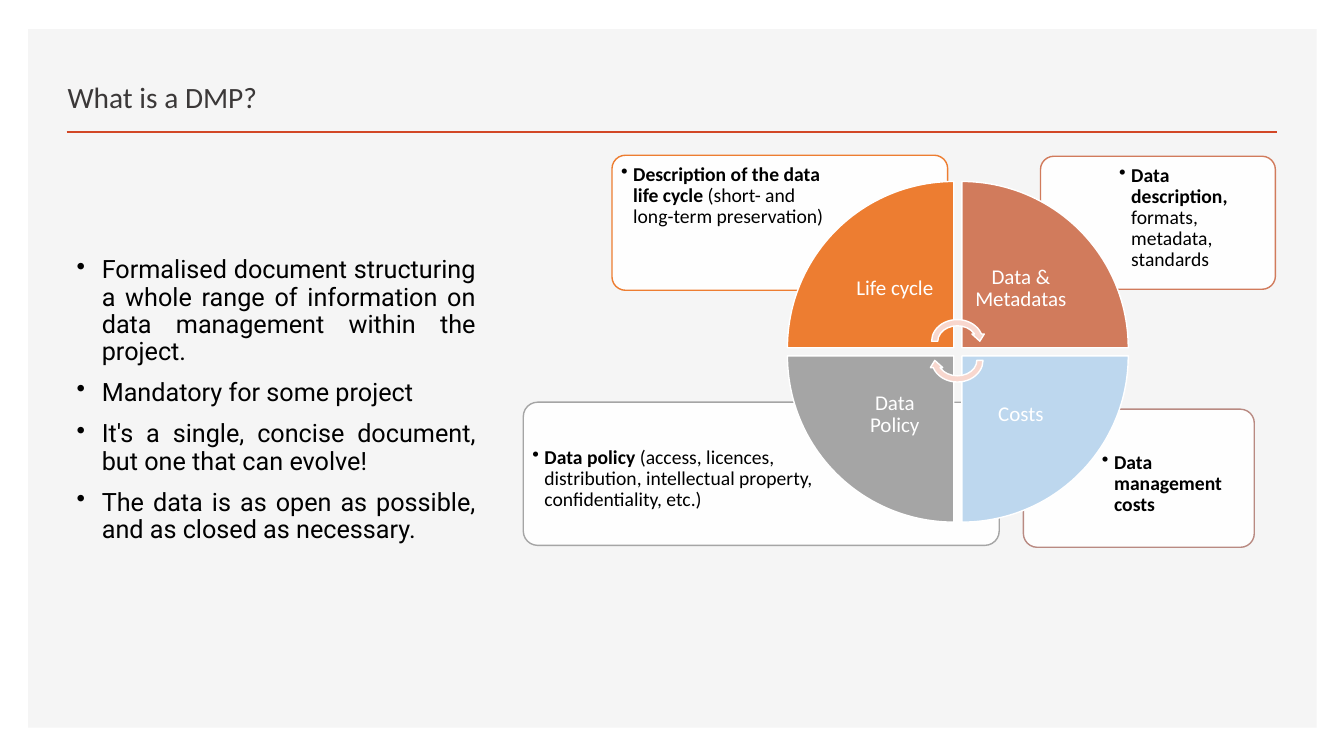
import pptx
import pptx.util
import pptx.dml.color
import pptx.enum.shapes
import pptx.enum.text
import pptx.oxml
import pptx.oxml.ns

Inches, Pt = pptx.util.Inches, pptx.util.Pt
SHAPE = pptx.enum.shapes.MSO_SHAPE
ALIGN = pptx.enum.text.PP_ALIGN
ANCHOR = pptx.enum.text.MSO_ANCHOR
rgb = pptx.dml.color.RGBColor.from_string
NS = pptx.oxml.ns.nsdecls("a")

prs = pptx.Presentation()
prs.slide_width, prs.slide_height = Inches(13.33), Inches(7.5)
slide = prs.slides.add_slide(prs.slide_layouts[5])
shapes = slide.shapes


def add_shape(kind, box, fill, line=None, rotation=0):
    sp = shapes.add_shape(kind, *map(Inches, box))
    sp.shadow.inherit = False
    sp.rotation = rotation
    sp.fill.solid()
    sp.fill.fore_color.rgb = rgb(fill)
    if line:
        sp.line.color.rgb = rgb(line)
        sp.line.width = Pt(1)
    else:
        sp.line.fill.background()
    return sp


def write(sp, paragraphs, font, size, color, align, anchor, insets, indent=0, before=0):
    """Each paragraph is a list of (text, bold) runs; an indent adds bullets."""
    tf = sp.text_frame
    frame = {"word_wrap": True, "vertical_anchor": anchor,
             "auto_size": pptx.enum.text.MSO_AUTO_SIZE.NONE}
    for side, inset in zip(("left", "top", "right", "bottom"), insets):
        frame["margin_" + side] = Inches(inset)
    for name, value in frame.items():
        setattr(tf, name, value)
    for i, runs in enumerate(paragraphs):
        p = tf.add_paragraph() if i else tf.paragraphs[0]
        p.alignment, p.line_spacing, p.space_before = align, 0.9, Pt(before)
        if indent:
            pPr = p._p.get_or_add_pPr()
            pPr.set("marL", str(Inches(indent)))
            pPr.set("indent", str(-Inches(indent)))
            pPr.append(pptx.oxml.parse_xml(f'<a:buChar {NS} char="•"/>'))
        for text, bold in runs:
            r = p.add_run()
            r.text = text
            for name, value in {"name": font, "size": Pt(size), "bold": bold}.items():
                setattr(r.font, name, value)
            r.font.color.rgb = rgb(color)


# Background panel and rule under the title
add_shape(SHAPE.RECTANGLE, (0.28, 0.29, 12.78, 6.93), "F5F5F5")
rule = shapes.add_connector(pptx.enum.shapes.MSO_CONNECTOR.STRAIGHT,
                            *map(Inches, (0.66, 1.31, 12.67, 1.31)))
rule.line.color.rgb = rgb("D24726")
rule.line.width = Pt(2)
rule._element.spPr.append(pptx.oxml.parse_xml(f"<a:effectLst {NS}/>"))

# Title, brought in front of the panel
title = shapes.title
title.left, title.top, title.width, title.height = map(Inches, (0.57, 0.49, 7.52, 0.7))
write(title, [[("What is a DMP?", False)]], "Calibri", 21, "3B3838",
      ALIGN.LEFT, ANCHOR.BOTTOM, (0.1, 0.05, 0.1, 0.05))
title._element.getparent().append(title._element)

# Callouts: frame, outline colour, text area, runs
callouts = [
    ((10.15, 4.06, 2.29, 1.37), "B98A82", (10.87, 4.43, 1.54, 0.97),
     [("Data management costs", True)]),
    ((5.19, 3.99, 4.72, 1.42), "A5A5A5", (5.22, 4.38, 3.24, 1.01),
     [("Data policy ", True),
      ("(access, licences, distribution, intellectual property, confidentiality, etc.)", False)]),
    ((10.32, 1.55, 2.33, 1.32), "D17B5C", (11.04, 1.58, 1.57, 0.93),
     [("Data description, ", True), ("formats, metadata, standards", False)]),
    ((6.07, 1.54, 3.33, 1.34), "ED7D31", (6.1, 1.57, 2.27, 0.95),
     [("Description of the data life cycle ", True),
      ("(short- and long-term preservation)", False)]),
]
for frame, outline, area, runs in callouts:
    sp = add_shape(SHAPE.ROUNDED_RECTANGLE, frame, "FFFFFF", outline)
    sp.adjustments[0] = 0.1
    color = sp._element.spPr.find(".//" + pptx.oxml.ns.qn("a:srgbClr"))
    color.append(pptx.oxml.parse_xml(f'<a:alpha {NS} val="90000"/>'))
    write(shapes.add_textbox(*map(Inches, area)), [runs], "Calibri", 14, "000000",
          ALIGN.LEFT, ANCHOR.TOP, [0.06] * 4, indent=0.12)

# Wheel: four wedges clockwise from top left, labels towards the centre
wheel_x, wheel_y, step, wedge, label = 7.81, 1.8, 1.73, 1.65, 1.17
quadrants = [("Life cycle", "ED7D31", 0, 0), ("Data & Metadatas", "D17B5C", 1, 0),
             ("Costs", "BDD7EE", 1, 1), ("Data Policy", "A5A5A5", 0, 1)]
for i, (text, fill, col, row) in enumerate(quadrants):
    x, y = wheel_x + col * step, wheel_y + row * step
    add_shape(SHAPE.PIE_WEDGE, (x, y, wedge, wedge), fill, "FFFFFF", 90 * i)
    area = (x + (1 - col) * (wedge - label), y + (1 - row) * (wedge - label), label, label)
    write(shapes.add_textbox(*map(Inches, area)), [[(text, False)]], "Calibri", 15,
          "FFFFFF", ALIGN.CENTER, ANCHOR.MIDDLE, [0.12] * 4)

# Rotation arrows at the hub
for top, rotation in ((3.14, 0), (3.33, 180)):
    add_shape(SHAPE.CIRCULAR_ARROW, (9.21, top, 0.57, 0.49), "F8D7CE", "FFFFFF", rotation)

# Key points
points = [
    "Formalised document structuring a whole range of information on data management within the project.",
    "Mandatory for some project",
    "It's a single, concise document, but one that can evolve!",
    "The data is as open as possible, and as closed as necessary.",
]
write(shapes.add_textbox(*map(Inches, (0.69, 2.51, 4.1, 3.7))),
      [[(point, False)] for point in points], "Roboto", 18, "000000",
      ALIGN.JUSTIFY, ANCHOR.TOP, (0.07, 0.04, 0.07, 0.04), indent=0.25, before=10)

prs.save("out.pptx")
